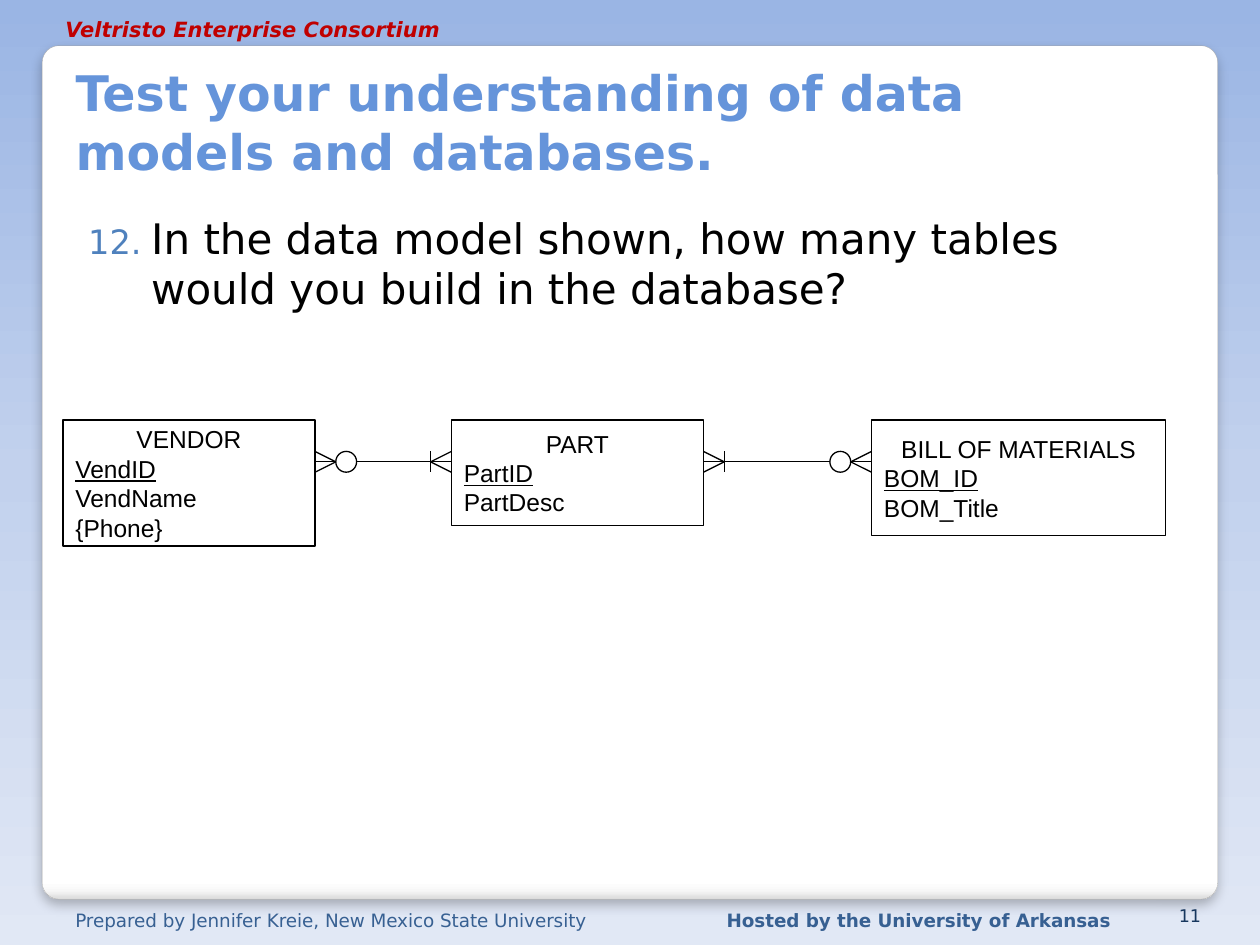
from pptx import Presentation
from pptx.dml.color import RGBColor
from pptx.enum.shapes import MSO_CONNECTOR as Connector, MSO_SHAPE as Shape
from pptx.enum.text import MSO_ANCHOR as Anchor, MSO_AUTO_SIZE as AutoSize, PP_ALIGN as Align
from pptx.oxml import parse_xml
from pptx.oxml.ns import nsdecls, qn
from pptx.oxml.xmlchemy import OxmlElement
from pptx.util import Cm, Pt

BLACK = RGBColor(0x00, 0x00, 0x00)
RED = RGBColor(0xC0, 0x00, 0x00)
TITLE_BLUE = RGBColor(0x65, 0x94, 0xDA)
FOOTER_BLUE = RGBColor(0x37, 0x60, 0x92)
NUMBER_BLUE = RGBColor(0x17, 0x37, 0x5E)
BULLET_BLUE = RGBColor(0x4F, 0x81, 0xBD)
PANEL_EDGE = RGBColor(0xA4, 0xA4, 0xA4)
WHITE = RGBColor(0xFF, 0xFF, 0xFF)
SKY = [(0, RGBColor(0x9A, 0xB5, 0xE4)), (50, RGBColor(0xC2, 0xD1, 0xED)),
       (100, RGBColor(0xE1, 0xE8, 0xF5))]
PANEL = [(0, WHITE), (98, WHITE), (99, RGBColor(0xF7, 0xF7, 0xF7)),
         (100, RGBColor(0xDA, 0xDA, 0xDA))]


def fill_downward(fill, owner, stops):
    """Give fill a top-to-bottom gradient; owner is the element that holds it."""
    fill.gradient()
    fill.gradient_angle = 270
    stop_list = owner.find(".//" + qn("a:gsLst"))
    stop_list.clear()
    for percent, color in stops:
        stop_list.append(parse_xml(
            f'<a:gs {nsdecls("a")} pos="{percent * 1000}"><a:srgbClr val="{color}"/></a:gs>'))


def write(para, text, size, color, font="DejaVu Sans", bold=False, italic=False,
          underline=False, align=Align.LEFT):
    para.alignment = align
    span = para.add_run()
    span.text = text
    span.font.name = font
    span.font.size = Pt(size)
    span.font.color.rgb = color
    span.font.bold = bold
    span.font.italic = italic
    span.font.underline = underline


deck = Presentation()
deck.slide_width, deck.slide_height = Cm(25.4), Cm(19.05)
page = deck.slides.add_slide(deck.slide_layouts[5])
fill_downward(page.background.fill, page.element, SKY)

# White panel, placed behind the title
title = page.shapes.title
panel = page.shapes.add_shape(Shape.ROUNDED_RECTANGLE, Cm(0.85), Cm(0.92), Cm(23.7), Cm(17.21))
title.element.addprevious(panel.element)
panel.adjustments[0] = 0.02
fill_downward(panel.fill, panel.element, PANEL)
panel.line.color.rgb = PANEL_EDGE
panel.line.width = Pt(0.16)
panel.element.spPr.append(parse_xml(
    f'<a:effectLst {nsdecls("a")}><a:outerShdw blurRad="{Pt(6)}" dist="{Pt(4)}" dir="5400000">'
    '<a:srgbClr val="000000"><a:alpha val="25000"/></a:srgbClr></a:outerShdw></a:effectLst>'))

# Header, footer and page number
captions = [
    (1.27, 18.21, 11.33, "Prepared by Jennifer Kreie, New Mexico State University",
     dict(size=10.5, color=FOOTER_BLUE)),
    (14.4, 18.21, 8.46, "Hosted by the University of Arkansas",
     dict(size=10.5, color=FOOTER_BLUE, bold=True)),
    (1.07, 0.2, 8.46, "Veltristo Enterprise Consortium",
     dict(size=12, color=RED, bold=True, italic=True)),
    (23.19, 18.21, 1.27, "11", dict(size=10, color=NUMBER_BLUE, align=Align.RIGHT)),
]
for left, top, width, text, style in captions:
    box = page.shapes.add_textbox(Cm(left), Cm(top), Cm(width), Cm(0.58))
    box.text_frame.word_wrap = True
    if text == "11":
        box.text_frame.vertical_anchor = Anchor.BOTTOM
    write(box.text_frame.paragraphs[0], text, **style)

# Title
title.left, title.top, title.width, title.height = Cm(1.27), Cm(0.84), Cm(22.73), Cm(2.92)
title.text_frame.vertical_anchor = Anchor.BOTTOM
title.text_frame.auto_size = AutoSize.NONE
write(title.text_frame.paragraphs[0], "Test your understanding of data models and databases.",
      28, TITLE_BLUE, bold=True)

# Numbered question
question = page.shapes.add_textbox(Cm(1.27), Cm(4.03), Cm(22.66), Cm(9.09))
frame = question.text_frame
frame.word_wrap = True
frame.margin_left, frame.margin_top = Cm(0.51), Cm(0.25)
para = frame.paragraphs[0]
para.space_before = Pt(2.5)
write(para, "In the data model shown, how many tables would you build in the database?", 24, BLACK)
layout = para._p.get_or_add_pPr()
layout.set("marL", str(Cm(1.27)))
layout.set("indent", str(Cm(-1.27)))
bullet_color = OxmlElement("a:buClr")
bullet_color.append(parse_xml(f'<a:srgbClr {nsdecls("a")} val="{BULLET_BLUE}"/>'))
bullet_size = OxmlElement("a:buSzPct")
bullet_size.set("val", "80000")
numbering = OxmlElement("a:buAutoNum")
numbering.set("type", "arabicPeriod")
numbering.set("startAt", "12")
layout.extend([bullet_color, bullet_size, numbering])

# Entities: the first attribute is the key
entities = [
    (1.27, 5.08, 2.54, "VENDOR", ["VendID", "VendName", "{Phone}"]),
    (9.1, 5.08, 2.12, "PART", ["PartID", "PartDesc"]),
    (17.57, 5.93, 2.33, "BILL OF MATERIALS", ["BOM_ID", "BOM_Title"]),
]
for left, width, height, name, attributes in entities:
    entity = page.shapes.add_shape(Shape.RECTANGLE, Cm(left), Cm(8.47), Cm(width), Cm(height))
    entity.shadow.inherit = False
    entity.fill.background()
    entity.line.color.rgb = BLACK
    entity.line.width = Pt(0.75)
    frame = entity.text_frame
    frame.word_wrap = True
    frame.vertical_anchor = Anchor.MIDDLE
    write(frame.paragraphs[0], name, 14, BLACK, font="Arial", align=Align.CENTER)
    for attribute in attributes:
        write(frame.add_paragraph(), attribute, 14, BLACK, font="Arial",
              underline=attribute == attributes[0])

# Relationships: each end is an entity edge, a direction away from it and a minimum of 0 or 1
AXIS, FOOT, SPREAD = 9.31, 0.42, 0.21
relationships = [
    [(6.35, 1, 0), (9.1, -1, 1)],
    [(14.18, 1, 1), (17.57, -1, 0)],
]
lines = []
for ends in relationships:
    inner = []
    for edge, direction, minimum in ends:
        tip = edge + direction * FOOT
        lines += [(tip, AXIS, edge, AXIS + offset) for offset in (-SPREAD, 0, SPREAD)]
        if minimum:
            lines.append((tip, AXIS - SPREAD, tip, AXIS + SPREAD))
            inner.append(tip)
        else:
            far = tip + direction * 2 * SPREAD
            circle = page.shapes.add_shape(Shape.OVAL, Cm(min(tip, far)), Cm(AXIS - SPREAD),
                                           Cm(2 * SPREAD), Cm(2 * SPREAD))
            circle.shadow.inherit = False
            circle.fill.background()
            circle.line.color.rgb = BLACK
            circle.line.width = Pt(0.75)
            inner.append(far)
    lines.append((inner[0], AXIS, inner[1], AXIS))

for ends in lines:
    line = page.shapes.add_connector(Connector.STRAIGHT, *[Cm(value) for value in ends])
    line.line.color.rgb = BLACK
    line.line.width = Pt(0.75)
    line._element.spPr.append(OxmlElement("a:effectLst"))

deck.save("out.pptx")
